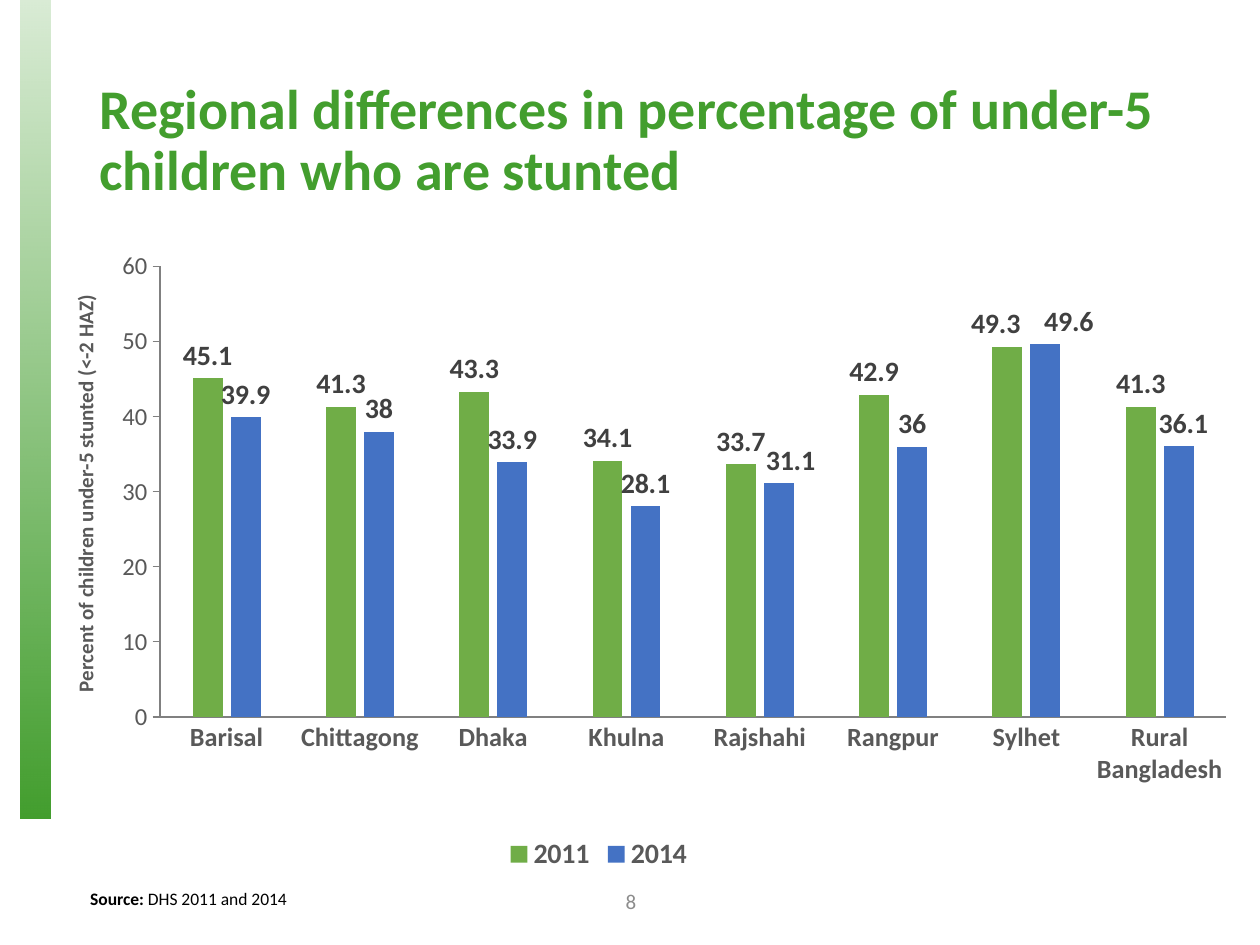
from dataclasses import dataclass

from lxml import etree
from pptx import Presentation
from pptx import util as u
from pptx.chart.data import CategoryChartData
from pptx.dml.color import RGBColor
from pptx.enum import chart as ch, shapes, text
from pptx.oxml import ns


@dataclass(frozen=True)
class Theme:
    font: str = "Calibri"
    green: str = "439E2E"
    black: str = "000000"
    number: str = "8C8C8C"
    axis: str = "595959"
    axis_line: str = "808080"
    label: str = "404040"
    series: tuple = ("70AD47", "4472C4")
    title_size: int = 32
    source_size: int = 10
    number_size: int = 12
    axis_title_size: int = 12
    value_size: int = 14
    category_size: int = 15
    label_size: int = 16


THEME = Theme()
REGIONS = ["Barisal", "Chittagong", "Dhaka", "Khulna", "Rajshahi",
           "Rangpur", "Sylhet", "Rural Bangladesh"]
STUNTED = {
    "2011": [45.1, 41.3, 43.3, 34.1, 33.7, 42.9, 49.3, 41.3],
    "2014": [39.9, 38, 33.9, 28.1, 31.1, 36, 49.6, 36.1],
}
# Sideways shift of single labels, as a fraction of the chart width
LABEL_SHIFTS = {"2011": {6: -0.01}, "2014": {4: 0.01, 6: 0.02, 7: 0.004}}


def box(*lengths):
    return [u.Cm(v) for v in lengths]


def apply(obj, values):
    for name, value in values.items():
        setattr(obj, name, value)


def style(font, size, color, bold=False):
    apply(font, {"name": THEME.font, "size": u.Pt(size), "bold": bold})
    font.color.rgb = RGBColor.from_string(color)


def set_layout(parent, index, modes=(), **values):
    """Give a chart part a manual layout, as fractions of the chart."""
    for old in parent.findall(ns.qn("c:layout")):
        parent.remove(old)
    layout = etree.Element(ns.qn("c:layout"))
    manual = etree.SubElement(layout, ns.qn("c:manualLayout"))
    for name, value in (*modes, *values.items()):
        etree.SubElement(manual, ns.qn(f"c:{name}"), val=str(value))
    parent.insert(index, layout)


EDGES = (("xMode", "edge"), ("yMode", "edge"))


def add_side_band(s):
    band = s.shapes.add_shape(shapes.MSO_SHAPE.RECTANGLE, *box(0.41, 0, 0.61, 16.51))
    band.shadow.inherit = False
    band.line.fill.background()
    band.fill.gradient()
    band.fill.gradient_angle = 270
    for stop, position in zip(band.fill.gradient_stops, (0, 1)):
        stop.position = position
        stop.color.rgb = RGBColor.from_string(THEME.green)
    first = band._element.spPr.find(".//" + ns.qn("a:srgbClr"))
    etree.SubElement(first, ns.qn("a:alpha"), val="20000")


def add_title(s, words):
    title = s.shapes.title
    apply(title, dict(zip(("left", "top", "width", "height"),
                          box(1.75, 1.02, 21.89, 3.68))))
    tf = title.text_frame
    apply(tf, {"word_wrap": True, "vertical_anchor": text.MSO_ANCHOR.MIDDLE,
               "auto_size": text.MSO_AUTO_SIZE.NONE})
    p = tf.paragraphs[0]
    apply(p, {"alignment": text.PP_ALIGN.LEFT, "line_spacing": 0.9})
    r = p.add_run()
    r.text = words
    style(r.font, THEME.title_size, THEME.green, True)


def add_text(s, place, runs, size, color, align=text.PP_ALIGN.LEFT,
             anchor=text.MSO_ANCHOR.TOP):
    """Add one paragraph made of (words, bold) runs."""
    tf = s.shapes.add_textbox(*place).text_frame
    apply(tf, {"word_wrap": True, "vertical_anchor": anchor})
    p = tf.paragraphs[0]
    p.alignment = align
    for words, bold in runs:
        r = p.add_run()
        r.text = words
        style(r.font, size, color, bold)


def format_axis(axis, tick, size, bold):
    apply(axis, {"has_major_gridlines": False, "major_tick_mark": tick,
                 "minor_tick_mark": ch.XL_TICK_MARK.NONE})
    axis.format.line.width = u.Pt(0.75)
    axis.format.line.color.rgb = RGBColor.from_string(THEME.axis_line)
    style(axis.tick_labels.font, size, THEME.axis, bold)


def add_axis_title(axis, words):
    tf = axis.axis_title.text_frame
    bodyPr = tf._txBody.find(ns.qn("a:bodyPr"))
    bodyPr.set("rot", "-5400000")
    bodyPr.set("vert", "horz")
    r = tf.paragraphs[0].add_run()
    r.text = words
    style(r.font, THEME.axis_title_size, THEME.axis, True)
    set_layout(axis.axis_title._element, 1, EDGES, x=0.01, y=0.07)


def format_series(series, color):
    series.format.fill.solid()
    series.format.fill.fore_color.rgb = RGBColor.from_string(color)
    labels = series.data_labels
    apply(labels, {"show_value": True,
                   "position": ch.XL_LABEL_POSITION.OUTSIDE_END})
    style(labels.font, THEME.label_size, THEME.label, True)
    for i, shift in LABEL_SHIFTS[series.name].items():
        label = series.points[i].data_label
        style(label.font, THEME.label_size, THEME.label, True)
        label.position = ch.XL_LABEL_POSITION.OUTSIDE_END
        dLbl = labels._element.find(f"{ns.qn('c:dLbl')}[{ns.qn('c:idx')}][last()]")
        set_layout(dLbl, 1, x=shift, y=0)


def add_stunting_chart(s):
    data = CategoryChartData()
    data.categories = REGIONS
    for year, values in STUNTED.items():
        data.add_series(year, values)
    chart = s.shapes.add_chart(ch.XL_CHART_TYPE.COLUMN_CLUSTERED,
                               *box(1.12, 4.7, 23.65, 16.76), data).chart
    apply(chart, {"has_title": False, "has_legend": True})
    style(chart.font, 10, THEME.black)

    plot = chart.plots[0]
    apply(plot, {"gap_width": 219, "overlap": -27, "vary_by_categories": False})
    for series, color in zip(plot.series, THEME.series):
        format_series(series, color)

    format_axis(chart.category_axis, ch.XL_TICK_MARK.NONE, THEME.category_size, True)
    format_axis(chart.value_axis, ch.XL_TICK_MARK.OUTSIDE, THEME.value_size, False)
    apply(chart.value_axis, {"minimum_scale": 0, "maximum_scale": 60, "major_unit": 10})
    add_axis_title(chart.value_axis, "Percent of children under-5 stunted (<-2 HAZ)")

    apply(chart.legend, {"position": ch.XL_LEGEND_POSITION.BOTTOM,
                         "include_in_layout": False})
    style(chart.legend.font, THEME.label_size, THEME.axis, True)
    set_layout(chart.legend._element, 1, EDGES, x=0.38, y=0.72)
    plot_area = chart._chartSpace.find(".//" + ns.qn("c:plotArea"))
    set_layout(plot_area, 0, (("layoutTarget", "inner"), *EDGES),
               x=0.089, y=0.04, w=0.909, h=0.542)


def main():
    prs = Presentation()
    apply(prs, {"slide_width": u.Cm(25.4), "slide_height": u.Cm(19.05)})
    s = prs.slides.add_slide(prs.slide_layouts[5])
    add_side_band(s)
    add_title(s, "Regional differences in percentage of under-5 "
                 "children who are stunted")
    add_text(s, box(1.57, 17.78, 18.47, 0.69),
             [("Source: ", True), ("DHS 2011 and 2014", False)],
             THEME.source_size, THEME.black)
    add_text(s, box(9.86, 17.65, 5.72, 1.02), [("8", False)],
             THEME.number_size, THEME.number,
             text.PP_ALIGN.CENTER, text.MSO_ANCHOR.MIDDLE)
    add_stunting_chart(s)
    prs.save("out.pptx")


if __name__ == "__main__":
    main()
